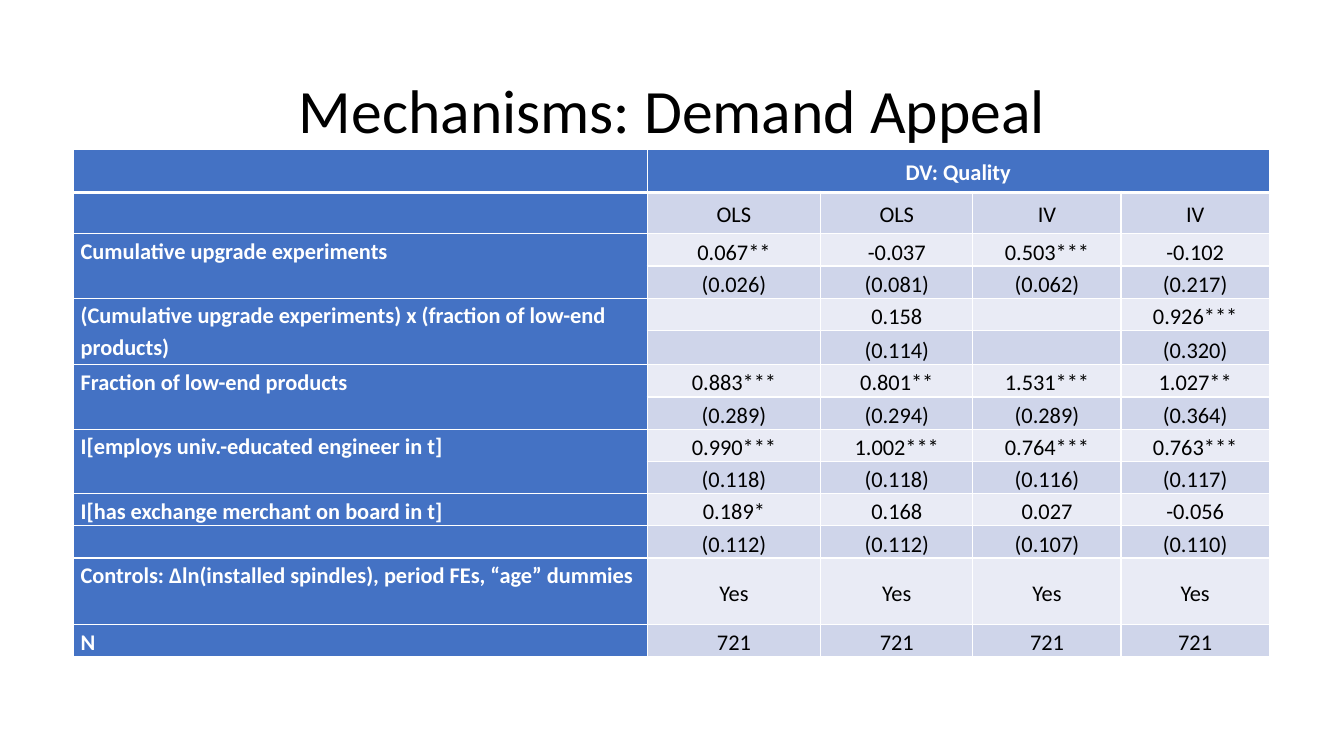
import pptx
import pptx.dml.color
import pptx.enum.text
import pptx.oxml
import pptx.oxml.ns
import pptx.util

Inches = pptx.util.Inches
Pt = pptx.util.Pt
RGBColor = pptx.dml.color.RGBColor
ALIGN = pptx.enum.text.PP_ALIGN
ANCHOR = pptx.enum.text.MSO_ANCHOR

COLORS = {
    "header": "4472C4",
    "dark_band": "CFD5EA",
    "light_band": "E9EBF5",
    "white": "FFFFFF",
    "black": "000000",
}


def write(tf, text, size=16, color="black", bold=False, align=ALIGN.CENTER, spacing=1.15):
    p = tf.paragraphs[0]
    p.alignment = align
    p.line_spacing = spacing
    r = p.add_run()
    r.text = text
    r.font.name = "Calibri"
    r.font.size = Pt(size)
    r.font.bold = bold
    r.font.color.rgb = RGBColor.from_string(COLORS[color])


def add_border(cell, side, width):
    line = pptx.oxml.parse_xml(
        f'<a:ln{side} {pptx.oxml.ns.nsdecls("a")} w="{Pt(width)}"><a:solidFill>'
        f'<a:srgbClr val="{COLORS["white"]}"/></a:solidFill></a:ln{side}>'
    )
    cell._tc.get_or_add_tcPr().append(line)


prs = pptx.Presentation()
prs.slide_width = Inches(13.33)
prs.slide_height = Inches(7.5)
s = prs.slides.add_slide(prs.slide_layouts[6])

title = s.shapes.add_textbox(Inches(0.92), Inches(0.4), Inches(11.5), Inches(1.45))
tf = title.text_frame
tf.word_wrap = True
tf.vertical_anchor = ANCHOR.MIDDLE
write(tf, "Mechanisms: Demand Appeal", size=44, spacing=0.9)

rows = [
    ("", "DV: Quality", "", "", ""),
    ("", "OLS", "OLS", "IV", "IV"),
    ("Cumulative upgrade experiments", "0.067**", "-0.037", "0.503***", "-0.102"),
    ("", "(0.026)", "(0.081)", "(0.062)", "(0.217)"),
    ("(Cumulative upgrade experiments) x (fraction of low-end products)",
     "", "0.158", "", "0.926***"),
    ("", "", "(0.114)", "", "(0.320)"),
    ("Fraction of low-end products", "0.883***", "0.801**", "1.531***", "1.027**"),
    ("", "(0.289)", "(0.294)", "(0.289)", "(0.364)"),
    ("I[employs univ.-educated engineer in t]",
     "0.990***", "1.002***", "0.764***", "0.763***"),
    ("", "(0.118)", "(0.118)", "(0.116)", "(0.117)"),
    ("I[has exchange merchant on board in t]", "0.189*", "0.168", "0.027", "-0.056"),
    ("", "(0.112)", "(0.112)", "(0.107)", "(0.110)"),
    ("Controls: Δln(installed spindles), period FEs, “age” dummies",
     "Yes", "Yes", "Yes", "Yes"),
    ("N", "721", "721", "721", "721"),
]
col_widths = [5.69, 1.72, 1.51, 1.47, 1.47]
row_heights = {0: 0.43, 1: 0.41, 5: 0.34, 12: 0.66}
middle_rows = (0, 1, 12, 13)

table = s.shapes.add_table(
    len(rows), len(col_widths), Inches(0.73), Inches(1.48), Inches(11.86), Inches(5.07)
).table
for i, width in enumerate(col_widths):
    table.columns[i].width = Inches(width)

for i, row in enumerate(rows):
    table.rows[i].height = Inches(row_heights.get(i, 0.32))
    for j, text in enumerate(row):
        cell = table.cell(i, j)
        is_header = i == 0 or j == 0
        cell.margin_left = cell.margin_right = Inches(0.07)
        cell.margin_top = cell.margin_bottom = 0
        if j == 0 or (i == 13 and j > 2):
            cell.vertical_anchor = ANCHOR.TOP
        else:
            cell.vertical_anchor = ANCHOR.MIDDLE if i in middle_rows else ANCHOR.BOTTOM
        for side in "LRTB":
            under_header = (i, side) in ((0, "B"), (1, "T"))
            add_border(cell, side, 3 if under_header else 1)
        band = "dark_band" if i % 2 else "light_band"
        cell.fill.solid()
        cell.fill.fore_color.rgb = RGBColor.from_string(
            COLORS["header" if is_header else band])
        if text:
            write(cell.text_frame, text, color="white" if is_header else "black",
                  bold=is_header, align=ALIGN.LEFT if j == 0 else ALIGN.CENTER)

table.cell(0, 1).merge(table.cell(0, 4))
for i in range(2, 10, 2):
    table.cell(i, 0).merge(table.cell(i + 1, 0))

prs.save("out.pptx")
